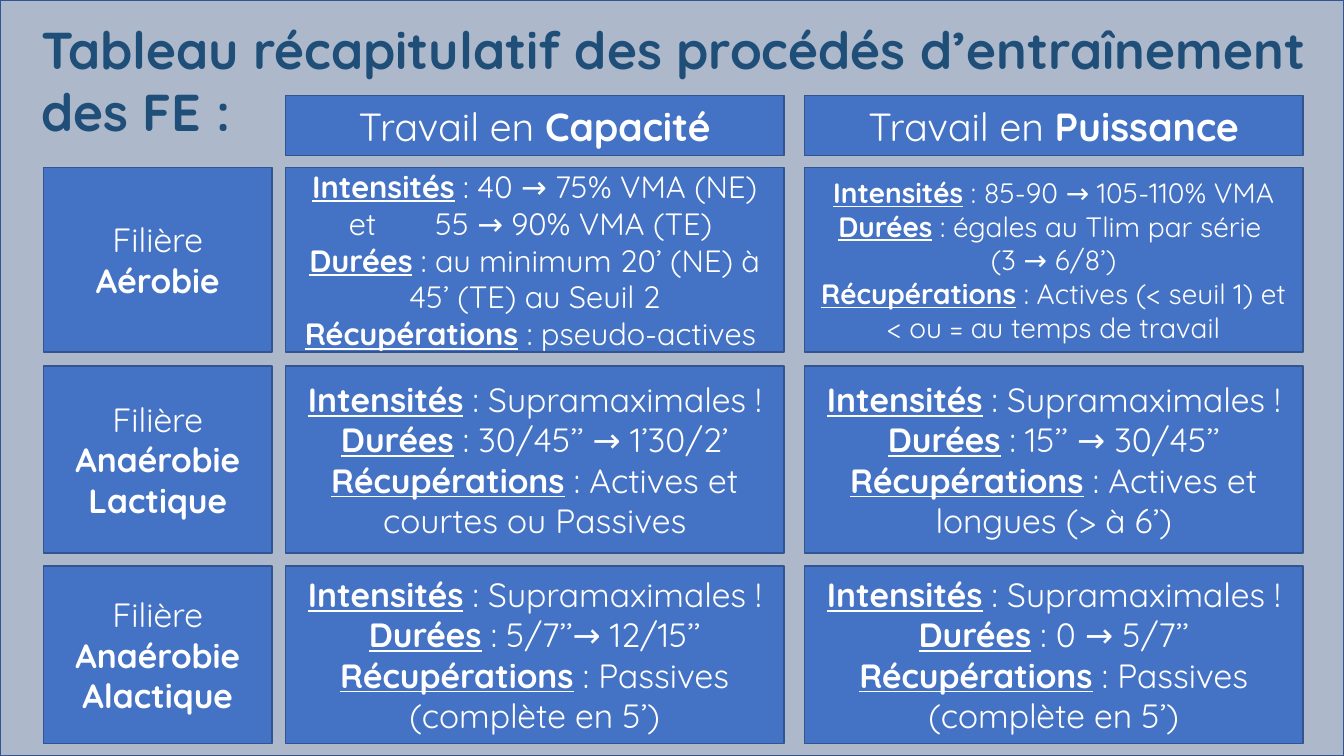
from pptx import Presentation
from pptx.dml.color import RGBColor
from pptx.enum.shapes import MSO_SHAPE
from pptx.enum.text import MSO_ANCHOR, PP_ALIGN
from pptx.util import Cm, Pt

RECTANGLE = MSO_SHAPE.RECTANGLE
CENTER = PP_ALIGN.CENTER
MIDDLE = MSO_ANCHOR.MIDDLE

# Content
TITLE = "Tableau récapitulatif des procédés d’entraînement des FE :"
WORK_TYPES = ["Capacité", "Puissance"]
INTENSITY, DURATION, RECOVERY = "Intensités", "Durées", "Récupérations"
SUPRAMAXIMAL = (INTENSITY, " : Supramaximales !")
WIDE_SPACE = " "  # a run of its own, widened by character spacing

# Each cell: text size, then paragraphs of (label, text, text, ...)
SYSTEMS = [
    ("Aérobie", [
        (22, [(INTENSITY, " : 40 → 75% VMA (NE) et", WIDE_SPACE, "55 → 90% VMA (TE) "),
              (DURATION, " : au minimum 20’ (NE) à 45’ (TE) au Seuil 2"),
              (RECOVERY, " : pseudo-actives ")]),
        (20, [(INTENSITY, " : 85-90 → 105-110% VMA"),
              (DURATION, " : égales au Tlim par série "),
              ("", "(3 → 6/8’)"),
              (RECOVERY, " : Actives (< seuil 1) et < ou = au temps de travail")]),
    ]),
    ("Anaérobie Lactique", [
        (24, [SUPRAMAXIMAL,
              (DURATION, " : 30/45’’ → 1’30/2’"),
              (RECOVERY, " : Actives et courtes ou Passives")]),
        (24, [SUPRAMAXIMAL,
              (DURATION, " : 15’’ → 30/45’’"),
              (RECOVERY, " : Actives et longues (> à 6’)")]),
    ]),
    ("Anaérobie Alactique", [
        (24, [SUPRAMAXIMAL,
              (DURATION, " : 5/7’’→ 12/15’’"),
              (RECOVERY, " : Passives (complète en 5’)")]),
        (24, [SUPRAMAXIMAL,
              (DURATION, " : 0 → 5/7’’"),
              (RECOVERY, " : Passives (complète en 5’)")]),
    ]),
]

# Layout in centimetres and style
SLIDE_WIDTH, SLIDE_HEIGHT = 33.87, 19.05
LABEL_LEFT, LABEL_WIDTH = 1.09, 5.77
WORK_LEFTS, WORK_WIDTH = [7.19, 20.27], 12.57
HEADER_TOP, HEADER_HEIGHT = 2.4, 1.52
ROWS = [(4.22, 4.65), (9.22, 4.72), (14.26, 4.47)]  # top, height
FONT = "Quicksand"
BACKDROP, BOX, OUTLINE = "ADB9CA", "4472C4", "325491"
WHITE, NAVY = "FFFFFF", "1F4E79"


def color(hex_value):
    return RGBColor.from_string(hex_value)


def add_run(paragraph, text, size, bold=False, underline=False, hex_value=WHITE):
    run = paragraph.add_run()
    run.text = text
    font = run.font
    font.name, font.size = FONT, Pt(size)
    font.bold, font.underline = bold, underline
    font.color.rgb = color(hex_value)
    return run


def add_box(slide, left, top, width, height, fill=BOX):
    shape = slide.shapes.add_shape(RECTANGLE, Cm(left), Cm(top), Cm(width), Cm(height))
    shape.shadow.inherit = False
    shape.fill.solid()
    shape.fill.fore_color.rgb = color(fill)
    shape.line.color.rgb = color(OUTLINE)
    shape.line.width = Pt(1)
    frame = shape.text_frame
    frame.word_wrap = True
    frame.vertical_anchor = MIDDLE
    frame.paragraphs[0].alignment = CENTER
    return frame


def add_heading(frame, lead, name, size):
    paragraph = frame.paragraphs[0]
    add_run(paragraph, lead, size)
    add_run(paragraph, name, size, bold=True)


def fill_cell(frame, size, lines):
    for index, (label, *texts) in enumerate(lines):
        paragraph = frame.add_paragraph() if index else frame.paragraphs[0]
        paragraph.alignment = CENTER
        if label:
            add_run(paragraph, label, size, bold=True, underline=True)
        for text in texts:
            run = add_run(paragraph, text, size)
            if text == WIDE_SPACE:
                run._r.get_or_add_rPr().set("spc", "3600")


def main():
    presentation = Presentation()
    presentation.slide_width = Cm(SLIDE_WIDTH)
    presentation.slide_height = Cm(SLIDE_HEIGHT)
    slide = presentation.slides.add_slide(presentation.slide_layouts[6])

    # Backdrop and title
    add_box(slide, 0, 0, SLIDE_WIDTH, SLIDE_HEIGHT, BACKDROP)
    title = slide.shapes.add_textbox(Cm(0.79), Cm(0.33), Cm(33.07), Cm(3.51)).text_frame
    title.word_wrap = True
    add_run(title.paragraphs[0], TITLE, 37, bold=True, hex_value=NAVY)

    # Column headers
    for left, name in zip(WORK_LEFTS, WORK_TYPES):
        frame = add_box(slide, left, HEADER_TOP, WORK_WIDTH, HEADER_HEIGHT)
        add_heading(frame, "Travail en ", name, 28)

    # One row per energy system
    for (top, height), (name, cells) in zip(ROWS, SYSTEMS):
        frame = add_box(slide, LABEL_LEFT, top, LABEL_WIDTH, height)
        add_heading(frame, "Filière ", name, 24)
        for left, (size, lines) in zip(WORK_LEFTS, cells):
            fill_cell(add_box(slide, left, top, WORK_WIDTH, height), size, lines)

    presentation.save("out.pptx")


if __name__ == "__main__":
    main()
